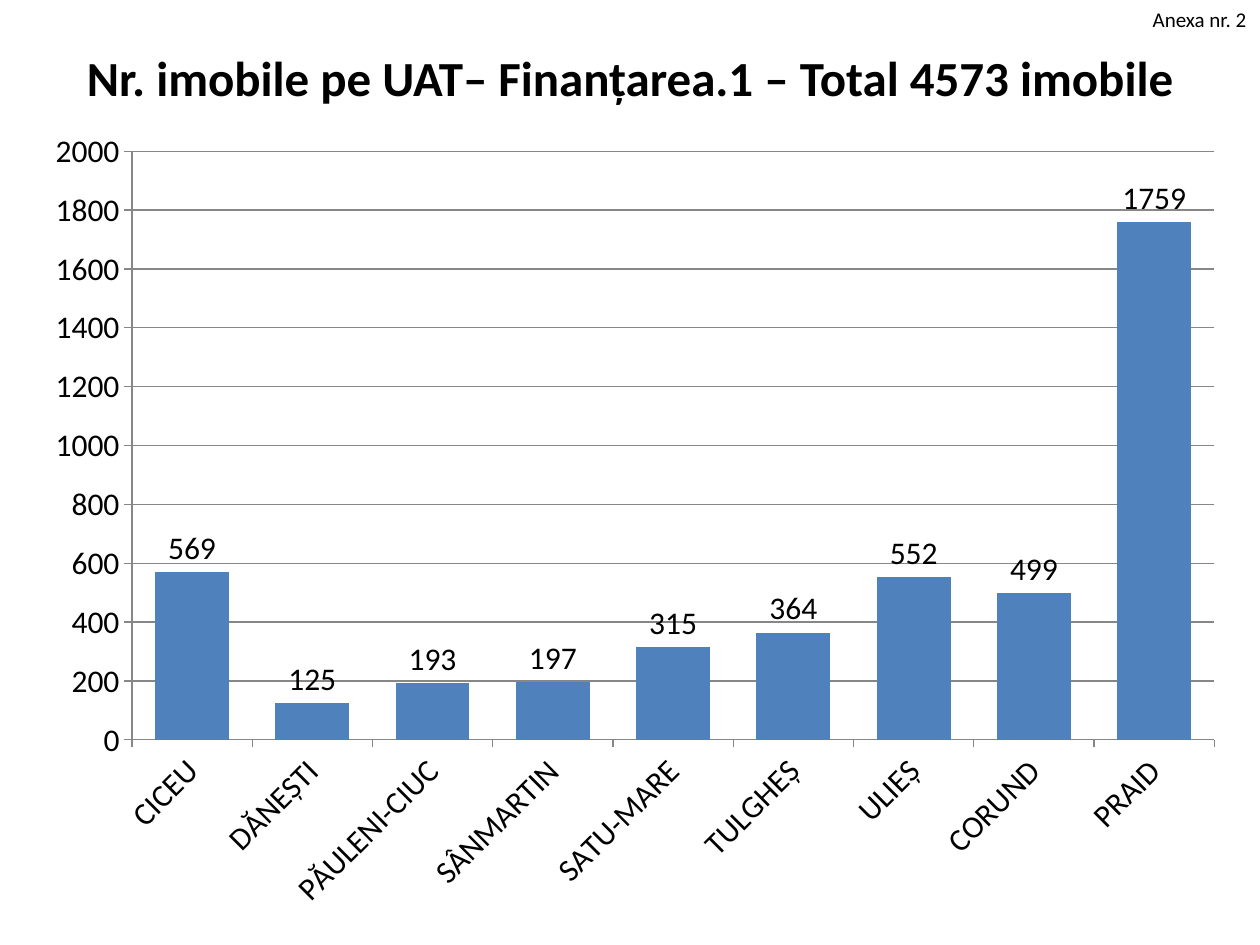
import pptx
import pptx.chart.data
import pptx.dml.color
import pptx.enum.chart
import pptx.enum.text
import pptx.util

Pt = pptx.util.Pt

TITLE = "Nr. imobile pe UAT– Finanțarea.1 – Total 4573 imobile"
ANNEX = "Anexa nr. 2"
PROPERTIES = {
    "CICEU": 569,
    "DĂNEȘTI": 125,
    "PĂULENI-CIUC": 193,
    "SÂNMARTIN": 197,
    "SATU-MARE": 315,
    "TULGHEȘ": 364,
    "ULIEȘ": 552,
    "CORUND": 499,
    "PRAID": 1759,
}
THEME = {
    "font": "Calibri",
    "title": 28,
    "chart": 18,
    "annex": 12,
    "text": "000000",
    "bar": "4F81BD",
    "line": "878787",
}
PAGE_SIZE = (720, 540)
TITLE_AREA = (36, 21.6, 648, 44.64)
CHART_AREA = (18, 66.24, 689.76, 462.24)
ANNEX_AREA = (651.6, 0, 68.4, 21.6)


def color(name):
    return pptx.dml.color.RGBColor.from_string(THEME[name])


def style_font(font, size, bold=False):
    font.name = THEME["font"]
    font.size = Pt(THEME[size])
    font.bold = bold
    font.color.rgb = color("text")


def add_text(page, text, area, *, size, bold=False, align="LEFT", anchor="TOP", wrap=True):
    box = page.shapes.add_textbox(*map(Pt, area))
    frame = box.text_frame
    frame.word_wrap = wrap
    frame.vertical_anchor = pptx.enum.text.MSO_ANCHOR[anchor]
    para = frame.paragraphs[0]
    para.alignment = pptx.enum.text.PP_ALIGN[align]
    span = para.add_run()
    span.text = text
    style_font(span.font, size, bold)
    return box


def style_line(line):
    line.color.rgb = color("line")
    line.width = Pt(0.75)


def add_property_chart(page):
    data = pptx.chart.data.CategoryChartData()
    data.categories = list(PROPERTIES)
    data.add_series("Series 1", list(PROPERTIES.values()))
    kind = pptx.enum.chart.XL_CHART_TYPE.COLUMN_CLUSTERED
    chart = page.shapes.add_chart(kind, *map(Pt, CHART_AREA), data).chart
    chart.has_legend = False
    chart.has_title = False
    style_font(chart.font, "chart")

    plot = chart.plots[0]
    plot.gap_width = 63
    plot.vary_by_categories = False
    fill = plot.series[0].format.fill
    fill.solid()
    fill.fore_color.rgb = color("bar")
    plot.has_data_labels = True
    labels = plot.data_labels
    labels.show_value = True
    labels.position = pptx.enum.chart.XL_LABEL_POSITION.OUTSIDE_END
    style_font(labels.font, "chart")

    for axis in (chart.category_axis, chart.value_axis):
        axis.major_tick_mark = pptx.enum.chart.XL_TICK_MARK.OUTSIDE
        axis.minor_tick_mark = pptx.enum.chart.XL_TICK_MARK.NONE
        style_line(axis.format.line)
        style_font(axis.tick_labels.font, "chart")
    scale = chart.value_axis
    scale.minimum_scale, scale.maximum_scale, scale.major_unit = 0, 2000, 200
    scale.has_major_gridlines = True
    style_line(scale.major_gridlines.format.line)
    for body in chart.element.xpath(".//c:catAx/c:txPr/a:bodyPr"):
        body.set("rot", "-2700000")
        body.set("vert", "horz")


def main():
    deck = pptx.Presentation()
    deck.slide_width, deck.slide_height = map(Pt, PAGE_SIZE)
    page = deck.slides.add_slide(deck.slide_layouts[6])
    add_text(page, TITLE, TITLE_AREA, size="title", bold=True, align="CENTER", anchor="MIDDLE")
    add_property_chart(page)
    annex = add_text(page, ANNEX, ANNEX_AREA, size="annex", wrap=False)
    annex.text_frame.auto_size = pptx.enum.text.MSO_AUTO_SIZE.SHAPE_TO_FIT_TEXT
    deck.save("out.pptx")


if __name__ == "__main__":
    main()
